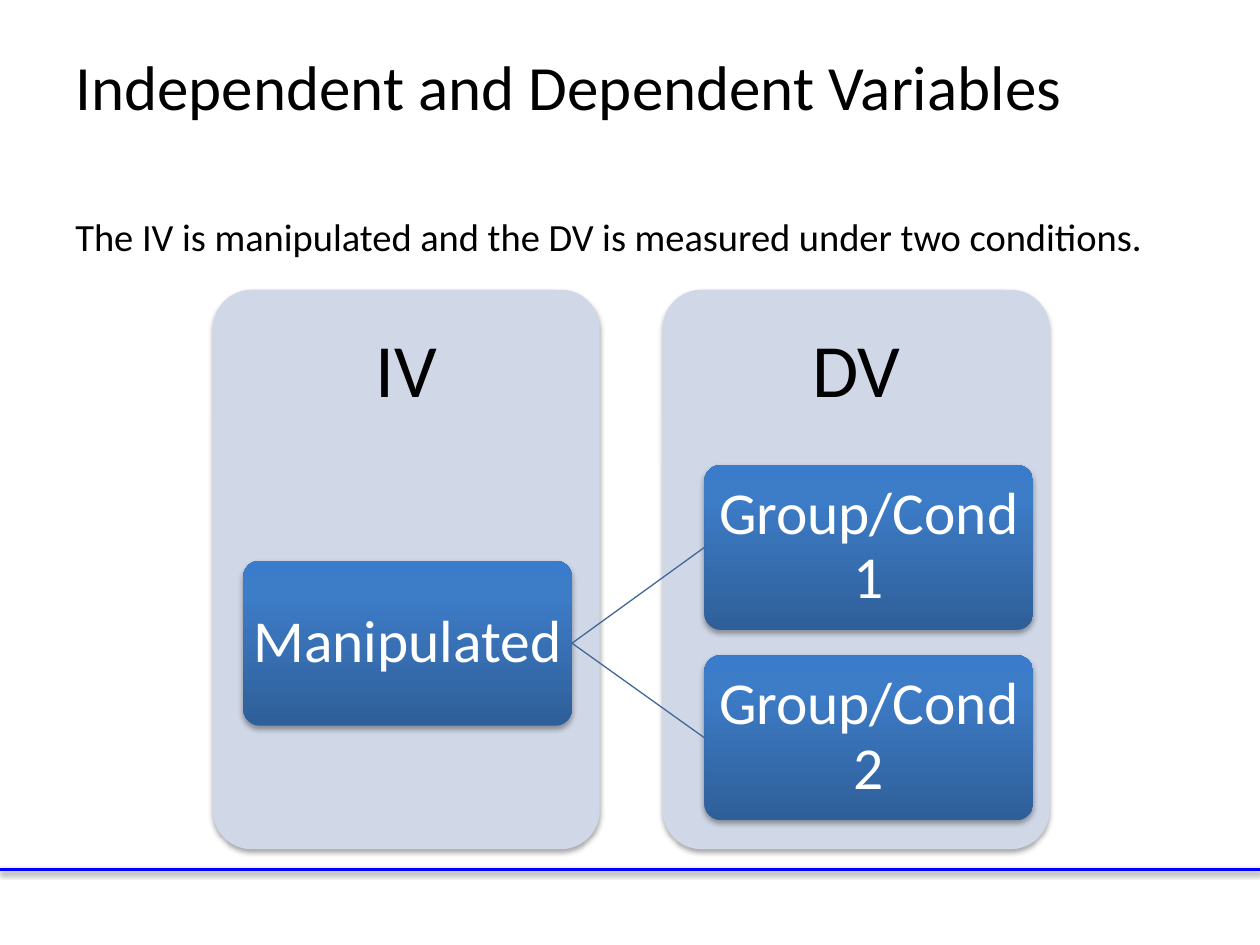
import copy
import lxml.etree
import pptx
import pptx.util
import pptx.dml.color
import pptx.enum.shapes
import pptx.enum.text
import pptx.oxml.ns

Inches = pptx.util.Inches
Kind = pptx.enum.shapes.MSO_SHAPE
Align = pptx.enum.text.PP_ALIGN
Anchor = pptx.enum.text.MSO_ANCHOR
qn = pptx.oxml.ns.qn

TITLE = "Independent and Dependent Variables"
BODY = "The IV is manipulated and the DV is measured under two conditions."
PANELS = [("IV", 1.69), ("DV", 5.26)]
CARDS = [("Manipulated", 1.93, 4.45), ("Group/Cond 1", 5.59, 3.69),
         ("Group/Cond 2", 5.59, 5.2)]
LINKS = [(0, 1), (0, 2)]

COLORS = {"text": "000000", "light": "FFFFFF", "panel": "D0D8E8",
          "rule": "0000FF", "link": "3F6797"}
STOPS = [(0, "2F5F99"), (0.8, "3D7CC7"), (1, "3A7CCB")]
TOP, PANEL_W, PANEL_H, HEAD_H = 2.3, 3.07, 4.44, 1.33
CARD_W, CARD_H = 2.61, 1.31
RULE_Y = 6.9


def rgb(code):
    return pptx.dml.color.RGBColor.from_string(code)


def shade(shape, alpha=None, dist=1.8):
    """Add a soft shadow below the shape, or an empty effect list."""
    props = shape._element.spPr
    for old in props.findall(qn("a:effectLst")):
        props.remove(old)
    effects = lxml.etree.SubElement(props, qn("a:effectLst"))
    if alpha:
        shadow = lxml.etree.SubElement(
            effects, qn("a:outerShdw"), blurRad=str(pptx.util.Pt(3.1)),
            dist=str(pptx.util.Pt(dist)), dir="5400000", rotWithShape="0")
        color = lxml.etree.SubElement(shadow, qn("a:srgbClr"), val="000000")
        lxml.etree.SubElement(color, qn("a:alpha"), val=str(alpha * 1000))


def write(shape, text, size, color="text", inset=None, align=Align.CENTER,
          anchor=Anchor.MIDDLE, spacing=0.9):
    frame = shape.text_frame
    frame.word_wrap = True
    frame.vertical_anchor = anchor
    if inset is not None:
        for side in ("left", "right", "top", "bottom"):
            setattr(frame, "margin_" + side, Inches(inset))
    para = frame.paragraphs[0]
    para.alignment, para.line_spacing = align, spacing
    run = para.add_run()
    run.text = text
    run.font.color.rgb = rgb(COLORS[color])
    for name, value in {"name": "Calibri", "size": pptx.util.Pt(size)}.items():
        setattr(run.font, name, value)


def label(slide, box, text, size, **style):
    write(slide.shapes.add_textbox(*map(Inches, box)), text, size, **style)


def rounded(slide, *box):
    shape = slide.shapes.add_shape(Kind.ROUNDED_RECTANGLE, *map(Inches, box))
    shape.adjustments[0] = 0.1
    shape.line.fill.background()
    return shape


def blend(shape):
    """Fill from dark at the bottom to bright at the top."""
    fill = shape.fill
    fill.gradient()
    fill.gradient_angle = 90
    stops = shape._element.spPr.find(".//" + qn("a:gsLst"))
    stops.append(copy.deepcopy(stops[-1]))
    for stop, (place, code) in zip(fill.gradient_stops, STOPS):
        stop.position = place
        stop.color.rgb = rgb(code)


def join(slide, ends, color, width):
    line = slide.shapes.add_connector(
        pptx.enum.shapes.MSO_CONNECTOR.STRAIGHT, *map(Inches, ends))
    line.line.color.rgb = rgb(COLORS[color])
    line.line.width = pptx.util.Pt(width)
    shade(line)
    return line


def main():
    deck = pptx.Presentation()
    deck.slide_width, deck.slide_height = Inches(10), Inches(7.5)
    slide = deck.slides.add_slide(deck.slide_layouts[6])

    shade(join(slide, (0, RULE_Y, 10, RULE_Y), "rule", 2), 38, 1.6)
    label(slide, (0.5, 0.16, 9, 1.03), TITLE, 36, align=Align.LEFT, spacing=1)
    label(slide, (0.5, 1.64, 9, 0.46), BODY, 22, align=Align.JUSTIFY,
          anchor=Anchor.TOP, spacing=1)

    for text, left in PANELS:
        panel = rounded(slide, left, TOP, PANEL_W, PANEL_H)
        panel.fill.solid()
        panel.fill.fore_color.rgb = rgb(COLORS["panel"])
        shade(panel, 35)
        label(slide, (left, TOP, PANEL_W, HEAD_H), text, 43, inset=0.33)

    cards = []
    for text, left, top in CARDS:
        card = rounded(slide, left, top, CARD_W, CARD_H)
        blend(card)
        shade(card, 35)
        write(card, text, 34, color="light", inset=0.02)
        cards.append(card)

    for start, end in LINKS:
        link = join(slide, (0, 0, 1, 1), "link", 0.75)
        link.begin_connect(cards[start], 3)
        link.end_connect(cards[end], 1)

    deck.save("out.pptx")


if __name__ == "__main__":
    main()
